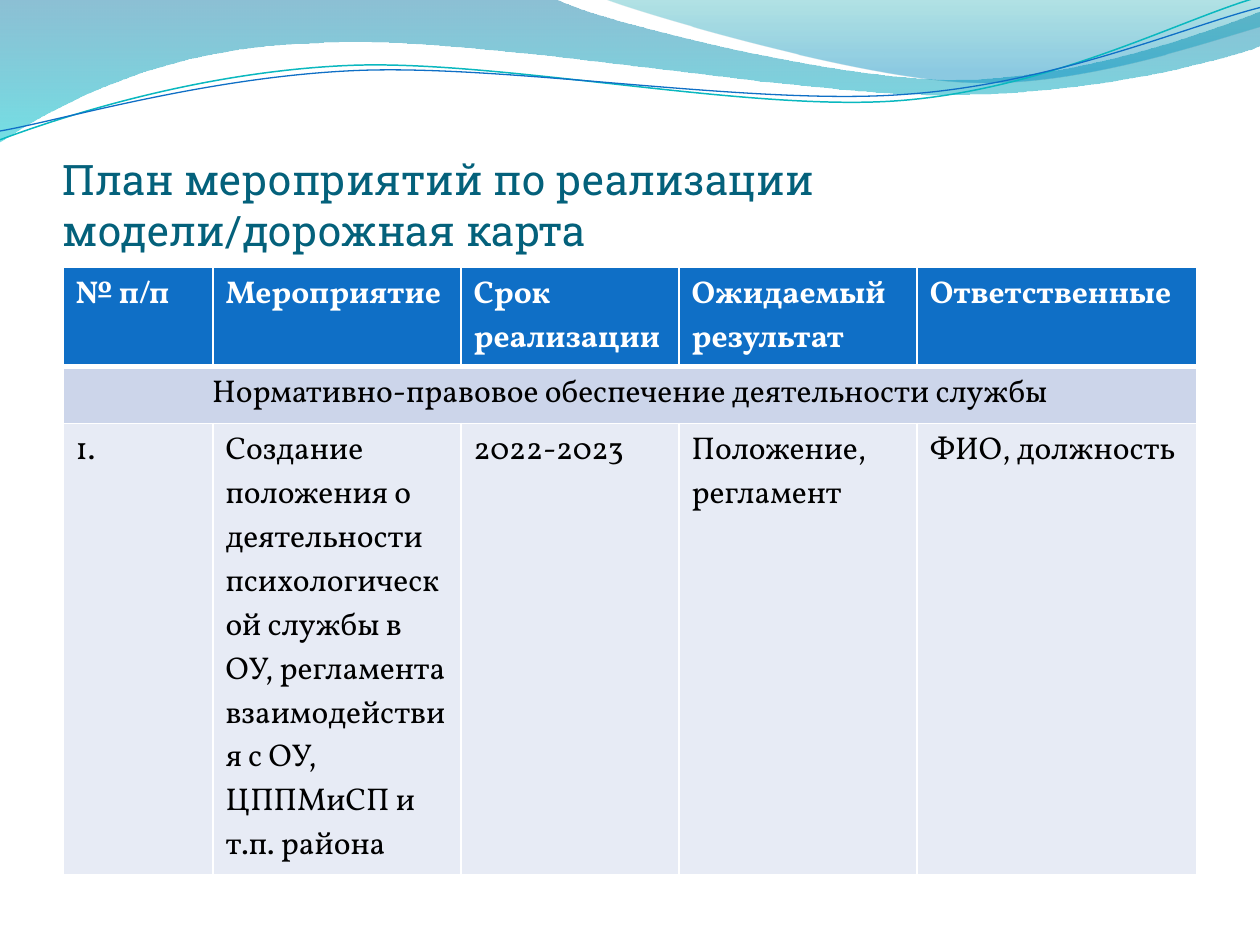
from dataclasses import dataclass

from lxml import etree
from pptx import Presentation, util as u
from pptx.dml.color import RGBColor
from pptx.enum import text
from pptx.oxml.ns import qn


@dataclass(frozen=True)
class Theme:
    title_font: str = "Roboto Slab"
    body_font: str = "Vollkorn"
    title_size: int = 24
    body_size: int = 18
    title: str = "04617B"
    header: str = "0F6FC6"
    section: str = "CCD5EA"
    row: str = "E7EBF5"
    white: str = "FFFFFF"
    black: str = "000000"


THEME = Theme()
WIDTH, HEIGHT = 10, 7.5
MARGIN = 0.05 * WIDTH
TABLE_TOP = 2.12
UNITS_PER_INCH = 1000

TITLE = "План мероприятий по реализации модели/дорожная карта"
HEADER = ["№ п/п", "Мероприятие", "Срок реализации", "Ожидаемый результат", "Ответственные"]
COLUMNS = [1.19, 1.97, 1.73, 1.89, 2.22]
ROWS = [0.79, 0.45, 3.58]
SECTION = "Нормативно-правовое обеспечение деятельности службы"
ACTIVITY = [
    "1.",
    "Создание положения о деятельности психологической службы в ОУ, "
    "регламента взаимодействия с ОУ, ЦППМиСП и т.п. района",
    "2022-2023",
    "Положение, регламент",
    "ФИО, должность",
]

# Each step holds one point (straight) or three points (cubic curve), in inches.
# Gradient stops: position, colour, opacity in percent.
WAVES = [
    {"start": (0, 0),
     "steps": [[(4.4, -0.01)],
               [(4.76, 0.17), (6.64, 0.63), (7.58, 0.63)],
               [(8.53, 0.63), (9.58, 0.26), (10, 0.09)],
               [(10.01, 0.36)],
               [(9.83, 0.44), (8.7, 0.76), (7.46, 0.75)],
               [(6.22, 0.75), (3.82, 0.28), (2.57, 0.34)],
               [(1.29, 0.36), (0.46, 0.83), (-0.01, 1.13)],
               [(0, 0)]],
     "stops": [(0, "0074A1", 45), (1, "00C6CF", 55)]},
    {"start": (4.79, -0.01),
     "steps": [[(5.09, 0.11), (6.82, 0.62), (7.69, 0.65)],
               [(8.56, 0.69), (9.61, 0.32), (10, 0.21)],
               [(10, 0)],
               [(4.79, -0.01)]],
     "stops": [(0, "00A1A9", 30), (0.8, "008BBF", 45)]},
    {"start": (0, 1.11),
     "steps": [[(0.48, 0.93), (1.58, 0.57), (2.77, 0.52)],
               [(3.95, 0.47), (5.93, 0.89), (7.13, 0.8)],
               [(8.33, 0.71), (9.38, 0.15), (9.98, -0.02)]],
     "line": ("0AB8BF", 0.85)},
    {"start": (0, 1.04),
     "steps": [[(0.47, 0.96), (1.64, 0.61), (2.83, 0.56)],
               [(4.03, 0.51), (5.97, 0.84), (7.17, 0.75)],
               [(8.36, 0.67), (9.41, 0.21), (10, 0.06)]],
     "line": ("0F6FC6", 0.75)},
]


def rgb(color):
    return RGBColor.from_string(color)


def in_units(point):
    return tuple(round(value * UNITS_PER_INCH) for value in point)


def bend(shape, steps):
    """Turn the straight segments of every three-point step into one cubic curve."""
    segments = iter(list(shape.element.spPr.iter(qn("a:lnTo"))))
    for step in steps:
        first, *others = [next(segments) for _ in step]
        if others:
            curve = etree.Element(qn("a:cubicBezTo"))
            first.addprevious(curve)
            for segment in (first, *others):
                curve.append(segment[0])
                segment.getparent().remove(segment)


def add_wave(slide, start, steps, stops=None, line=None):
    builder = slide.shapes.build_freeform(*in_units(start), scale=u.Inches(1) / UNITS_PER_INCH)
    points = [in_units(point) for step in steps for point in step]
    builder.add_line_segments(points, close=stops is not None)
    shape = builder.convert_to_shape()
    bend(shape, steps)
    shape.shadow.inherit = False
    if stops:
        shape.line.fill.background()
        shape.fill.gradient()
        shape.fill.gradient_angle = 270
        for stop, (position, color, _) in zip(shape.fill.gradient_stops, stops):
            stop.position = position
            stop.color.rgb = rgb(color)
        for element, (_, _, opacity) in zip(shape.element.spPr.iter(qn("a:srgbClr")), stops):
            etree.SubElement(element, qn("a:alpha"), val=str(opacity * 1000))
    else:
        shape.fill.background()
        shape.line.color.rgb = rgb(line[0])
        shape.line.width = u.Pt(line[1])


def write(frame, content, *, font, size, color, bold=False, align=text.PP_ALIGN.LEFT):
    frame.word_wrap = True
    paragraph = frame.paragraphs[0]
    paragraph.alignment = align
    run = paragraph.add_run()
    run.text = content
    run.font.name, run.font.size, run.font.bold = font, u.Pt(size), bold
    run.font.color.rgb = rgb(color)


def set_borders(cell, top, bottom):
    properties = cell._tc.get_or_add_tcPr()
    for index, (side, width) in enumerate([("L", 1), ("R", 1), ("T", top), ("B", bottom)]):
        line = etree.Element(qn(f"a:ln{side}"), w=str(u.Pt(width)))
        fill = etree.SubElement(line, qn("a:solidFill"))
        etree.SubElement(fill, qn("a:srgbClr"), val=THEME.white)
        properties.insert(index, line)


def add_title(slide):
    box = slide.shapes.add_textbox(
        u.Inches(MARGIN), u.Inches(0.77), u.Inches(WIDTH - 2 * MARGIN), u.Inches(1.25))
    frame = box.text_frame
    frame.margin_left = frame.margin_right = frame.margin_bottom = 0
    frame.vertical_anchor = text.MSO_ANCHOR.BOTTOM
    write(frame, TITLE, font=THEME.title_font, size=THEME.title_size, color=THEME.title)


def add_plan(slide):
    rows = [
        (HEADER, THEME.header, {"color": THEME.white, "bold": True}, (1, 3)),
        ([SECTION], THEME.section, {"color": THEME.black, "align": text.PP_ALIGN.CENTER}, (3, 1)),
        (ACTIVITY, THEME.row, {"color": THEME.black}, (1, 1)),
    ]
    table = slide.shapes.add_table(
        len(ROWS), len(COLUMNS), u.Inches(MARGIN), u.Inches(TABLE_TOP),
        u.Inches(sum(COLUMNS)), u.Inches(sum(ROWS))).table
    for column, width in zip(table.columns, COLUMNS):
        column.width = u.Inches(width)
    for row, height, (contents, fill, style, borders) in zip(table.rows, ROWS, rows):
        row.height = u.Inches(height)
        cells = list(row.cells)
        if len(contents) == 1:
            cells[0].merge(cells[-1])
        for cell in cells:
            cell.fill.solid()
            cell.fill.fore_color.rgb = rgb(fill)
            set_borders(cell, *borders)
        for cell, content in zip(cells, contents):
            write(cell.text_frame, content, font=THEME.body_font, size=THEME.body_size, **style)


def main():
    presentation = Presentation()
    presentation.slide_width, presentation.slide_height = u.Inches(WIDTH), u.Inches(HEIGHT)
    slide = presentation.slides.add_slide(presentation.slide_layouts[6])
    for wave in WAVES:
        add_wave(slide, **wave)
    add_title(slide)
    add_plan(slide)
    presentation.save("out.pptx")


if __name__ == "__main__":
    main()
